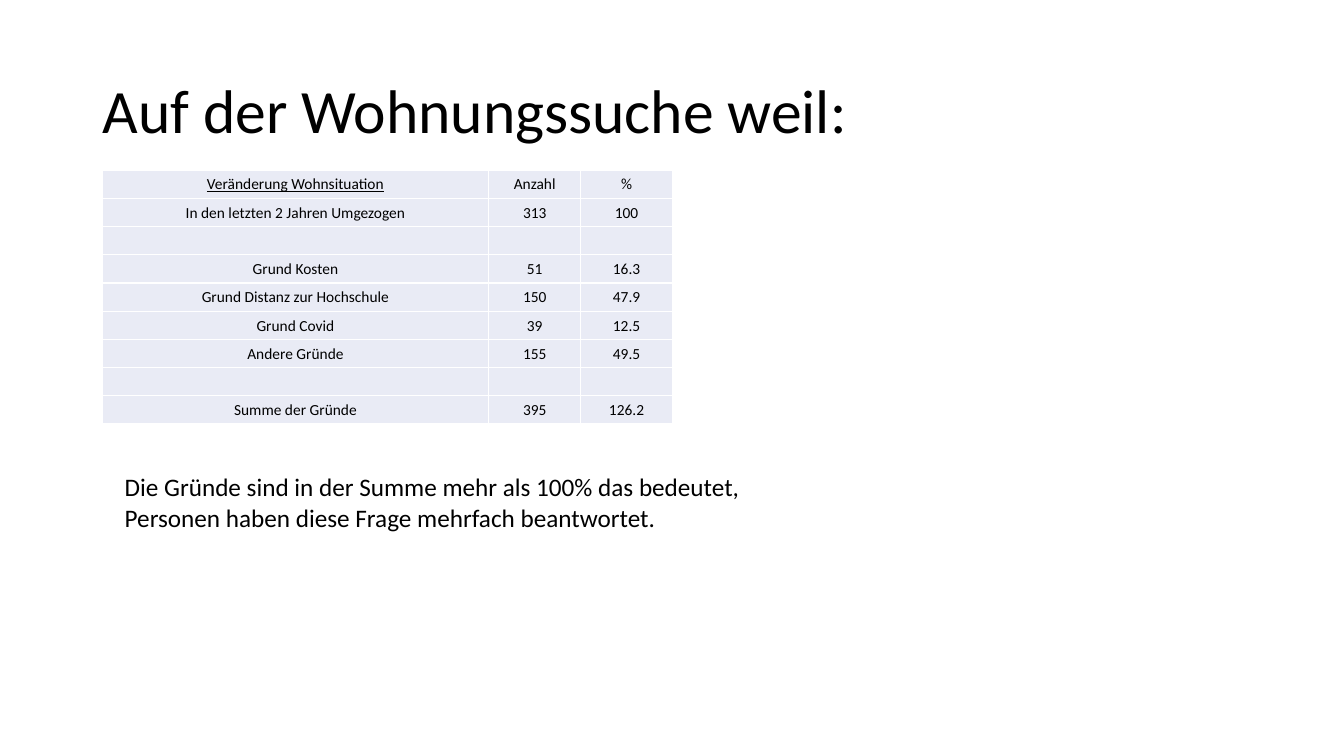
import pptx
import pptx.util
import pptx.dml.color
import pptx.enum.text
import pptx.oxml
import pptx.oxml.ns
from lxml import etree

Pt = pptx.util.Pt
RGBColor = pptx.dml.color.RGBColor
ALIGN = pptx.enum.text.PP_ALIGN
ANCHOR = pptx.enum.text.MSO_ANCHOR
qn = pptx.oxml.ns.qn

THEME = {
    "font": "Calibri",
    "text": "000000",
    "cell": "E9EBF5",
    "border": "FFFFFF",
    "title_size": 44,
    "note_size": 18,
    "table_size": 11,
}


def set_values(target, values):
    for name, value in values.items():
        setattr(target, name, value)


def write_text(paragraph, text, size, alignment=ALIGN.LEFT, underline=None):
    paragraph.alignment = alignment
    run = paragraph.add_run()
    run.text = text
    set_values(run.font, {"name": THEME["font"], "size": Pt(size), "underline": underline})
    run.font.color.rgb = RGBColor.from_string(THEME["text"])


presentation = pptx.Presentation()
set_values(presentation, {"slide_width": Pt(960), "slide_height": Pt(540)})
slide = presentation.slides.add_slide(presentation.slide_layouts[5])

# Title
title = slide.shapes.title
set_values(title, {"left": Pt(66), "top": Pt(28.75), "width": Pt(828), "height": Pt(104.4)})
set_values(title.text_frame, {"vertical_anchor": ANCHOR.MIDDLE, "word_wrap": True})
title_paragraph = title.text_frame.paragraphs[0]
title_paragraph.line_spacing = 0.9
write_text(title_paragraph, "Auf der Wohnungssuche weil:", THEME["title_size"])

# Table of reasons
rows = [
    ("Veränderung Wohnsituation", "Anzahl", "%"),
    ("In den letzten 2 Jahren Umgezogen", "313", "100"),
    ("", "", ""),
    ("Grund Kosten", "51", "16.3"),
    ("Grund Distanz zur Hochschule", "150", "47.9"),
    ("Grund Covid", "39", "12.5"),
    ("Andere Gründe", "155", "49.5"),
    ("", "", ""),
    ("Summe der Gründe", "395", "126.2"),
]
column_widths = [276.2, 65.6, 65.6]
row_height = 20.16
table = slide.shapes.add_table(
    len(rows), len(column_widths), Pt(73), Pt(121.5),
    Pt(sum(column_widths)), Pt(row_height * len(rows)),
).table
set_values(table, {"first_row": False, "horz_banding": False})
for column, width in zip(table.columns, column_widths):
    column.width = Pt(width)
for row in table.rows:
    row.height = Pt(row_height)

cell_format = {
    "vertical_anchor": ANCHOR.MIDDLE,
    "margin_left": Pt(0.7),
    "margin_right": Pt(0.7),
    "margin_top": Pt(0.7),
    "margin_bottom": Pt(0),
}
for row_index, values in enumerate(rows):
    for column_index, text in enumerate(values):
        cell = table.cell(row_index, column_index)
        set_values(cell, cell_format)
        properties = cell._tc.get_or_add_tcPr()
        for side in ("a:lnL", "a:lnR", "a:lnT", "a:lnB"):
            line = etree.SubElement(properties, qn(side), w=str(Pt(1)))
            line_fill = etree.SubElement(line, qn("a:solidFill"))
            etree.SubElement(line_fill, qn("a:srgbClr"), val=THEME["border"])
        cell.fill.solid()
        cell.fill.fore_color.rgb = RGBColor.from_string(THEME["cell"])
        paragraph = cell.text_frame.paragraphs[0]
        if text:
            is_heading = row_index == 0 and column_index == 0
            write_text(paragraph, text, THEME["table_size"], ALIGN.CENTER, is_heading)
        else:
            # Keep blank rows at the height of the small text
            etree.SubElement(paragraph._p, qn("a:endParaRPr"), sz=str(THEME["table_size"] * 100))

# Note below the table
note = slide.shapes.add_textbox(Pt(82), Pt(333.4), Pt(457.2), Pt(50.9))
set_values(note.text_frame, {
    "word_wrap": True,
    "auto_size": pptx.enum.text.MSO_AUTO_SIZE.SHAPE_TO_FIT_TEXT,
})
write_text(
    note.text_frame.paragraphs[0],
    "Die Gründe sind in der Summe mehr als 100% das bedeutet, "
    "Personen haben diese Frage mehrfach beantwortet.",
    THEME["note_size"],
)

presentation.save("out.pptx")
